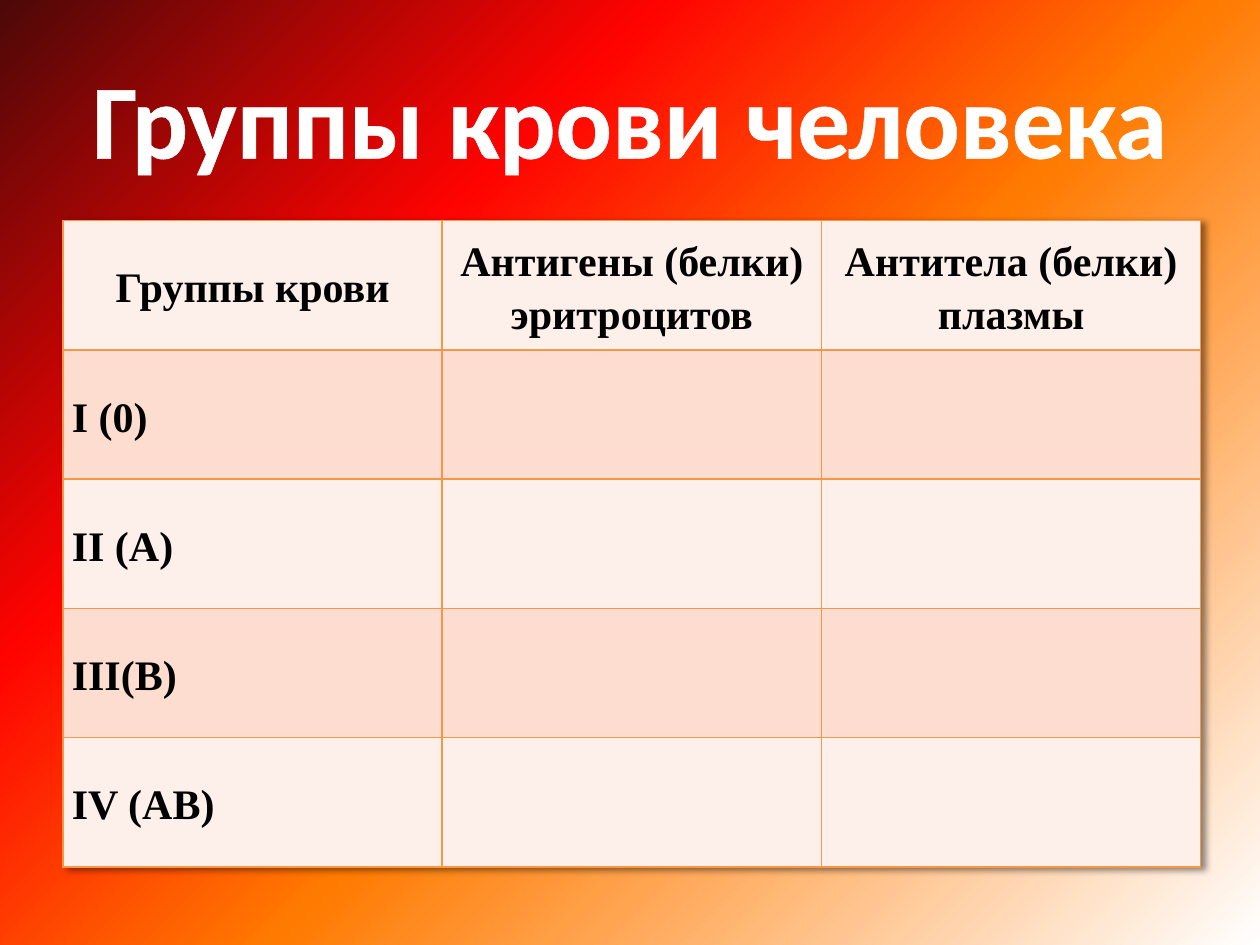
import lxml.etree
import pptx
import pptx.dml.color
import pptx.enum.text
import pptx.oxml
import pptx.oxml.ns
import pptx.util

Inches = pptx.util.Inches
Pt = pptx.util.Pt
qn = pptx.oxml.ns.qn
CENTER = pptx.enum.text.PP_ALIGN.CENTER
MIDDLE = pptx.enum.text.MSO_ANCHOR.MIDDLE

GRADIENT = [(0, "FFFFFF"), (45, "FF7A00"), (70, "FF0300"), (100, "4D0808")]
BAND_FILLS = ["FDEFE9", "FCDDCF"]
BORDER = "F79646"
HEADERS = ["Группы крови", "Антигены (белки) эритроцитов", "Антитела (белки) плазмы"]
BLOOD_GROUPS = ["I (0)", "II (А)", "III(В)", "IV (АВ)"]


def rgb(value):
    return pptx.dml.color.RGBColor.from_string(value)


def drawing_xml(body):
    """Parse one DrawingML element given without its namespace declaration."""
    return pptx.oxml.parse_xml(
        body.replace(" ", f' xmlns:a="{pptx.oxml.ns.nsuri("a")}" ', 1))


def line_xml(tag, color, points):
    return drawing_xml(
        f'<a:{tag} w="{Pt(points)}"><a:solidFill><a:srgbClr val="{color}"/>'
        f'</a:solidFill></a:{tag}>')


def style_font(paragraph, name, size, color):
    font = paragraph.font
    font.name, font.size, font.bold = name, Pt(size), True
    font.color.rgb = rgb(color)


def paint_background(slide):
    fill = slide.background.fill
    fill.gradient()
    fill.gradient_angle = 135
    stops = next(slide.background._cSld.iter(qn("a:gsLst")))
    for stop in list(stops):
        stops.remove(stop)
    for position, color in GRADIENT:
        stop = lxml.etree.SubElement(stops, qn("a:gs"), pos=str(position * 1000))
        lxml.etree.SubElement(stop, qn("a:srgbClr"), val=color)


def place_title(slide, left, top, width, height):
    title = slide.shapes.title
    title.left, title.top, title.width, title.height = left, top, width, height
    title.text_frame.vertical_anchor = MIDDLE
    paragraph = title.text_frame.paragraphs[0]
    paragraph.alignment = CENTER
    run = paragraph.add_run()
    run.text = "Группы крови человека"
    style_font(paragraph, "Calibri", 60, "FFFFFF")
    run._r.get_or_add_rPr().insert(0, line_xml("ln", "FFFFFF", 1.45))


def format_cell(cell, fill_color):
    cell.fill.solid()
    cell.fill.fore_color.rgb = rgb(fill_color)
    cell.vertical_anchor = MIDDLE
    cell.margin_left = cell.margin_right = Inches(0.07)
    cell.margin_top = cell.margin_bottom = Inches(0.07)
    properties = cell._tc.get_or_add_tcPr()
    for index, side in enumerate(["lnL", "lnR", "lnT", "lnB"]):
        properties.insert(index, line_xml(side, BORDER, 1))
    paragraph = cell.text_frame.paragraphs[0]
    paragraph.line_spacing = 1.15
    style_font(paragraph, "Times New Roman", 24, "000000")


def add_shadow(table):
    table._tbl.tblPr.insert(0, drawing_xml(
        '<a:effectLst ><a:outerShdw blurRad="50800" dist="38100" dir="1800000">'
        '<a:srgbClr val="000000"><a:alpha val="45000"/></a:srgbClr>'
        '</a:outerShdw></a:effectLst>'))


def place_blood_table(slide, left, top, width, height):
    rows = [HEADERS] + [[group, "", ""] for group in BLOOD_GROUPS]
    table = slide.shapes.add_table(
        len(rows), len(HEADERS), left, top, width, height).table
    table.first_row = table.horz_banding = False
    add_shadow(table)
    for row_index, row in enumerate(rows):
        for column_index, text in enumerate(row):
            cell = table.cell(row_index, column_index)
            cell.text = text
            format_cell(cell, BAND_FILLS[row_index % 2])
            if row_index == 0:
                cell.text_frame.paragraphs[0].alignment = CENTER


def main():
    presentation = pptx.Presentation()
    presentation.slide_width, presentation.slide_height = Inches(10), Inches(7.5)
    slide = presentation.slides.add_slide(presentation.slide_layouts[5])
    paint_background(slide)
    place_title(slide, Inches(0.5), Inches(0.3), Inches(9), Inches(1.25))
    place_blood_table(slide, Inches(0.5), Inches(1.75), Inches(9.03), Inches(5.13))
    presentation.save("out.pptx")


if __name__ == "__main__":
    main()
